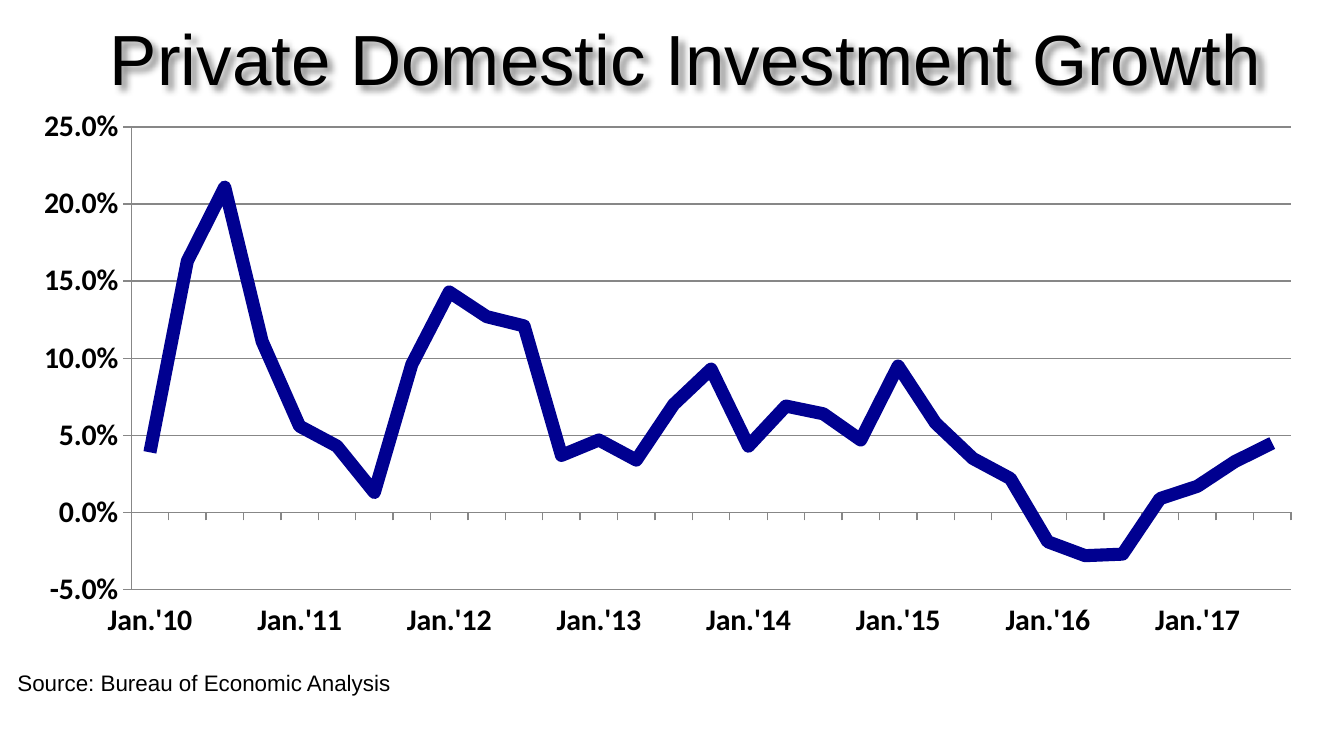
from lxml import etree
from pptx import Presentation
from pptx.chart.data import CategoryChartData
from pptx.dml.color import RGBColor
from pptx.enum.chart import XL_CHART_TYPE, XL_MARKER_STYLE, XL_TICK_LABEL_POSITION, XL_TICK_MARK
from pptx.enum.text import MSO_AUTO_SIZE, PP_ALIGN
from pptx.oxml import parse_xml
from pptx.oxml.ns import nsdecls, qn
from pptx.util import Cm, Pt

LINE = XL_CHART_TYPE.LINE
BARE = XL_MARKER_STYLE.NONE
LOW = XL_TICK_LABEL_POSITION.LOW
OUT, OFF = XL_TICK_MARK.OUTSIDE, XL_TICK_MARK.NONE
GROW = MSO_AUTO_SIZE.SHAPE_TO_FIT_TEXT
LEFT, MID = PP_ALIGN.LEFT, PP_ALIGN.CENTER
INK = {"text": "000000", "line": "000090", "grid": "878787", "shade": "000000"}


def paint(name):
    return RGBColor.from_string(INK[name])


def write(slide, box, words, size, align):
    """Add a one-line Arial text box."""
    shape = slide.shapes.add_textbox(*[Cm(v) for v in box])
    frame = shape.text_frame
    frame.word_wrap = True
    frame.auto_size = GROW
    para = frame.paragraphs[0]
    para.alignment = align
    run = para.add_run()
    run.text = words
    run.font.name = "Arial"
    run.font.size = Pt(size)
    run.font.color.rgb = paint("text")
    return shape


deck = Presentation()
deck.slide_width, deck.slide_height = Cm(25.4), Cm(14.28)
slide = deck.slides.add_slide(deck.slide_layouts[6])

# Title with a soft shadow, and the source line
title = write(slide, (1.32, 0.15, 23.29, 1.88),
              "Private Domestic Investment Growth", 38, MID)
title._element.spPr.append(parse_xml(
    f'<a:effectLst {nsdecls("a")}>'
    f'<a:outerShdw blurRad="{Pt(4)}" dist="{Pt(3)}" dir="2700000" algn="tl" rotWithShape="0">'
    f'<a:srgbClr val="{INK["shade"]}"><a:alpha val="43000"/></a:srgbClr>'
    '</a:outerShdw></a:effectLst>'))
write(slide, (0.08, 12.52, 13.69, 0.76),
      "Source: Bureau of Economic Analysis", 12, LEFT)

# Quarterly growth, with a label on each first quarter
growth = [
    0.039, 0.163, 0.211, 0.111,
    0.056, 0.043, 0.013, 0.096,
    0.143, 0.127, 0.121, 0.037,
    0.047, 0.034, 0.07, 0.093,
    0.043, 0.069, 0.064, 0.047,
    0.095, 0.058, 0.035, 0.022,
    -0.019, -0.028, -0.027, 0.009,
    0.017, 0.033, 0.045,
]
data = CategoryChartData(number_format="0.0%")
data.categories = ["" if i % 4 else f"Jan.'{10 + i // 4}" for i in range(len(growth))]
data.add_series("Series 1", growth)
frame = slide.shapes.add_chart(
    LINE, Cm(0.36), Cm(1.85), Cm(24.54), Cm(10.44), data)
chart = frame.chart
chart.has_legend = False
chart.has_title = False
chart.font.name = "Calibri"
chart.font.size = Pt(10)
chart.font.color.rgb = paint("text")

plot = chart.plots[0]
plot.vary_by_categories = False
curve = plot.series[0]
curve.smooth = False
curve.marker.style = BARE
curve.format.line.color.rgb = paint("line")
curve.format.line.width = Pt(7)

dates, rates = chart.category_axis, chart.value_axis
for axis in (dates, rates):
    axis.major_tick_mark = OUT
    axis.minor_tick_mark = OFF
    axis.format.line.color.rgb = paint("grid")
    axis.format.line.width = Pt(0.75)
    font = axis.tick_labels.font
    font.name = "Calibri"
    font.size = Pt(16)
    font.bold = True
    font.color.rgb = paint("text")
dates.tick_label_position = LOW
dates.has_major_gridlines = False

rates.minimum_scale, rates.maximum_scale = -0.05, 0.25
rates.major_unit = 0.05
rates.tick_labels.number_format = "0.0%"
rates.tick_labels.number_format_is_linked = False
rates.has_major_gridlines = True
grid = rates.major_gridlines.format.line
grid.color.rgb = paint("grid")
grid.width = Pt(0.75)

# Inner plot area, as shares of the chart frame
area = chart._chartSpace.chart.plotArea
for old in area.findall(qn("c:layout")):
    area.remove(old)
sides = {
    "x": (Cm(2.48) - frame.left) / frame.width,
    "y": (Cm(2.4) - frame.top) / frame.height,
    "w": Cm(21.92) / frame.width,
    "h": Cm(8.74) / frame.height,
}
layout = etree.Element(qn("c:layout"))
manual = etree.SubElement(layout, qn("c:manualLayout"))
etree.SubElement(manual, qn("c:layoutTarget"), val="inner")
for side in "xy":
    etree.SubElement(manual, qn(f"c:{side}Mode"), val="edge")
for side, share in sides.items():
    etree.SubElement(manual, qn(f"c:{side}"), val=str(share))
area.insert(0, layout)

deck.save("out.pptx")
